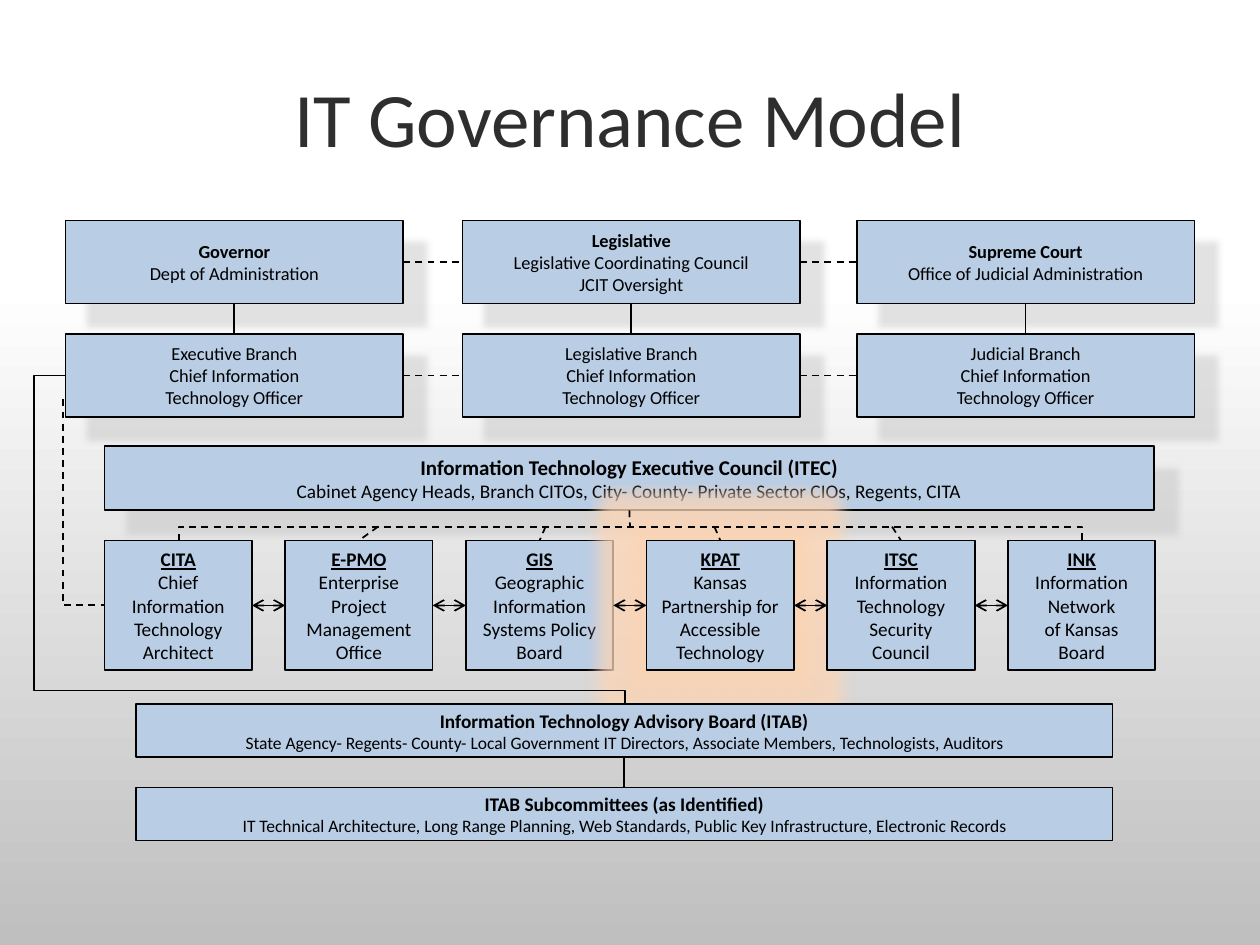
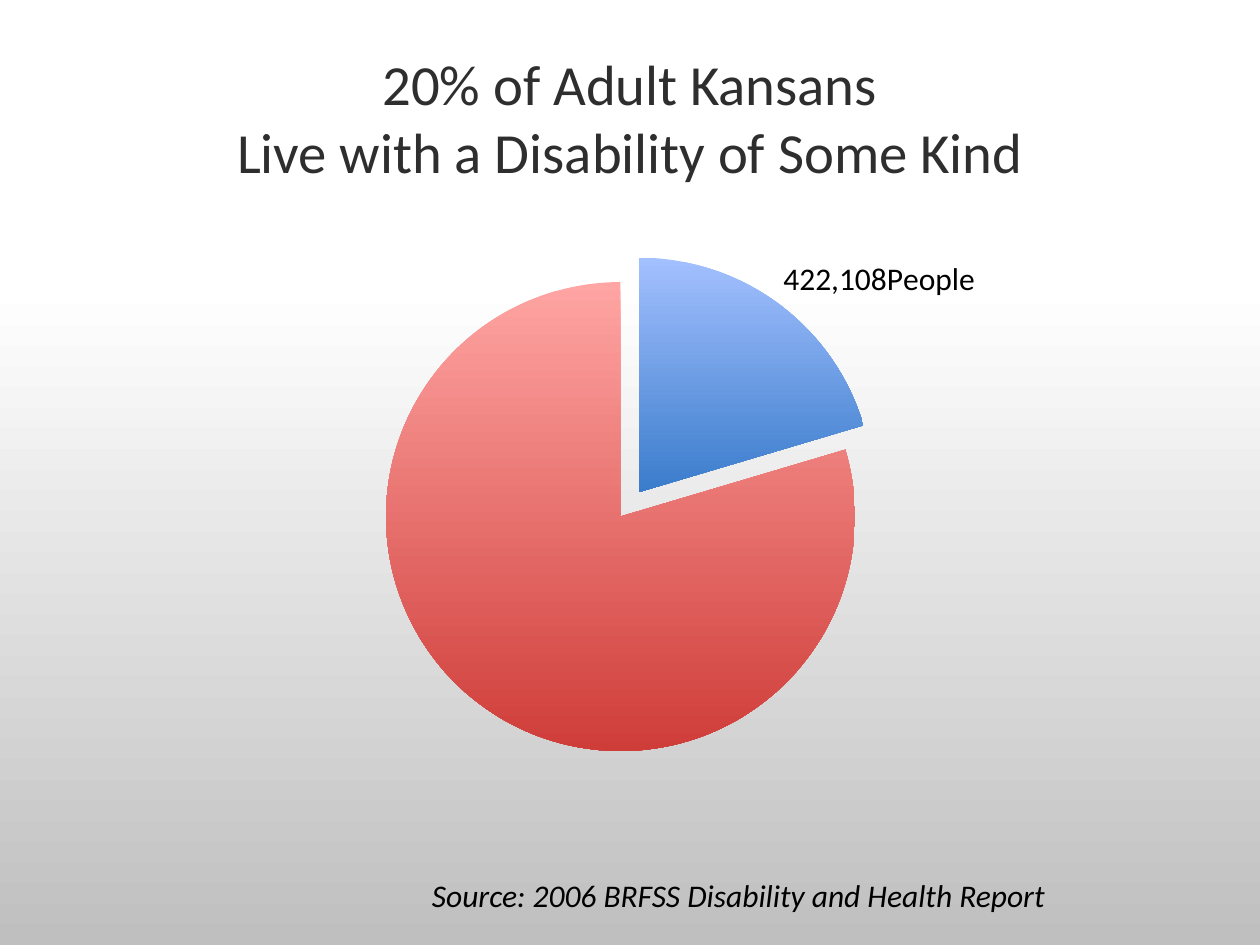
"""Build two slides: an IT governance chart and a pie of disability figures."""
import dataclasses
import itertools
import typing

import lxml.etree
import pptx
import pptx.chart.data
import pptx.dml.color
import pptx.enum.chart
import pptx.enum.dml
import pptx.enum.shapes
import pptx.enum.text
import pptx.oxml.ns
import pptx.util

Inches = pptx.util.Inches
Pt = pptx.util.Pt
RGB = pptx.dml.color.RGBColor.from_string
qn = pptx.oxml.ns.qn
TOP, LEFT, BOTTOM, RIGHT = range(4)


@dataclasses.dataclass(frozen=True)
class Theme:
    font: str = "Calibri"
    ink: str = "000000"
    title: str = "2E2E2E"
    box: str = "B9CDE5"
    shadow: str = "BFBFBF"
    glow: str = "FCD5B5"
    page: tuple[str, str] = ("FFFFFF", "BFBFBF")
    blue: tuple[str, str] = ("A3C0FF", "3A7CCB")
    red: tuple[str, str] = ("FFA5A3", "CF3D39")
    title_size: float = 44
    long_title_size: float = 32.4
    body_size: float = 18
    council_size: float = 12
    office_size: float = 11
    branch_size: float = 10.5
    board_size: float = 10
    line_width: float = 1


THEME = Theme()


@dataclasses.dataclass(frozen=True)
class Box:
    x: float
    y: float
    w: float
    h: float
    head: str
    lines: tuple[str, ...]
    size: float
    head_size: float
    bold: bool = True
    underline: bool = False
    effect: str = ""


class Side(typing.NamedTuple):
    sp: typing.Any
    site: int


Point = tuple[float, float]
End = typing.Union[Side, Point]


def set_gradient(fill: typing.Any, colors: tuple[str, str], start: float = 0) -> None:
    """Fill from top to bottom with two colours."""
    fill.gradient()
    fill.gradient_angle = 270
    for stop, color, position in zip(fill.gradient_stops, colors, (start, 1)):
        stop.color.rgb = RGB(color)
        stop.position = position


def add_run(p: typing.Any, text: str, size: float, color: str = THEME.ink,
            **style: bool) -> None:
    """Append one styled run to a paragraph."""
    r = p.add_run()
    r.text = text
    r.font.name, r.font.size = THEME.font, Pt(size)
    r.font.color.rgb = RGB(color)
    for name, value in style.items():
        setattr(r.font, name, value)


def add_slide(prs: typing.Any, title: tuple[str, ...], size: float) -> typing.Any:
    """Add a slide with the shared background and centred title."""
    s = prs.slides.add_slide(prs.slide_layouts[6])
    set_gradient(s.background.fill, THEME.page, 0.3)
    tf = s.shapes.add_textbox(Inches(0.5), Inches(0.3), Inches(9), Inches(1.25)).text_frame
    tf.word_wrap = True
    tf.vertical_anchor = pptx.enum.text.MSO_ANCHOR.MIDDLE
    p = tf.paragraphs[0]
    p.alignment = pptx.enum.text.PP_ALIGN.CENTER
    for i, text in enumerate(title):
        if i:
            p.add_line_break()
        add_run(p, text, size, THEME.title)
    return s


def add_effect(sp: typing.Any, kind: str) -> None:
    """Give a shape an offset shadow or a soft glow."""
    attrs, color, alpha = {
        "outerShdw": ({"blurRad": Pt(4), "dist": Pt(18), "dir": 45 * 60000},
                      THEME.shadow, 43),
        "glow": ({"rad": Inches(0.25)}, THEME.glow, 75),
    }[kind]
    effects = sp._element.spPr.find(qn("a:effectLst"))
    effect = lxml.etree.SubElement(effects, qn(f"a:{kind}"),
                                   {k: str(int(v)) for k, v in attrs.items()})
    clr = lxml.etree.SubElement(effect, qn("a:srgbClr"), val=color)
    lxml.etree.SubElement(clr, qn("a:alpha"), val=str(alpha * 1000))


def style_line(line: typing.Any, dashed: bool = False) -> None:
    """Apply the shared outline."""
    line.color.rgb = RGB(THEME.ink)
    line.width = Pt(THEME.line_width)
    if dashed:
        line.dash_style = pptx.enum.dml.MSO_LINE.DASH


def draw_box(s: typing.Any, box: Box) -> typing.Any:
    """Draw one labelled rectangle."""
    sp = s.shapes.add_shape(pptx.enum.shapes.MSO_SHAPE.RECTANGLE,
                            *map(Inches, (box.x, box.y, box.w, box.h)))
    sp.shadow.inherit = False
    sp.fill.solid()
    sp.fill.fore_color.rgb = RGB(THEME.box)
    style_line(sp.line)
    if box.effect:
        add_effect(sp, box.effect)
    tf = sp.text_frame
    tf.word_wrap = False
    tf.vertical_anchor = pptx.enum.text.MSO_ANCHOR.MIDDLE
    for i, text in enumerate((box.head, *box.lines)):
        p = tf.add_paragraph() if i else tf.paragraphs[0]
        p.alignment = pptx.enum.text.PP_ALIGN.CENTER
        if i:
            add_run(p, text, box.size)
        else:
            add_run(p, text, box.head_size, bold=box.bold, underline=box.underline)
    return sp


def draw_line(s: typing.Any, start: End, end: End, dashed: bool = False,
              arrows: bool = False) -> None:
    """Draw a straight connector between points or box sides."""
    points = [(0, 0) if isinstance(e, Side) else e for e in (start, end)]
    c = s.shapes.add_connector(pptx.enum.shapes.MSO_CONNECTOR.STRAIGHT,
                               *(Inches(v) for point in points for v in point))
    if isinstance(start, Side):
        c.begin_connect(*start)
    if isinstance(end, Side):
        c.end_connect(*end)
    style_line(c.line, dashed)
    spPr = c._element.spPr
    if arrows:
        for tag in ("a:headEnd", "a:tailEnd"):
            lxml.etree.SubElement(spPr.find(qn("a:ln")), qn(tag), type="arrow")
    lxml.etree.SubElement(spPr, qn("a:effectLst"))


def draw_route(s: typing.Any, points: list[Point], dashed: bool = False) -> None:
    """Draw an open line with right-angled bends."""
    emu = [(Inches(x), Inches(y)) for x, y in points]
    builder = s.shapes.build_freeform(*emu[0])
    builder.add_line_segments(emu[1:], close=False)
    sp = builder.convert_to_shape()
    sp.shadow.inherit = False
    sp.fill.background()
    style_line(sp.line, dashed)


def build_governance(prs: typing.Any) -> None:
    """Build the governance model slide."""
    s = add_slide(prs, ("IT Governance Model",), THEME.title_size)
    columns = (0.52, 3.67, 6.8)
    branches = (
        ("Governor", "Dept of Administration"),
        ("Legislative", "Legislative Coordinating Council", "JCIT Oversight"),
        ("Supreme Court", "Office of Judicial Administration"),
    )
    officers = [(f"{name} Branch", "Chief Information", "Technology Officer")
                for name in ("Executive", "Legislative", "Judicial")]
    rows = [
        [draw_box(s, Box(x, y, 2.68, 0.66, head, tuple(lines), THEME.branch_size,
                         THEME.branch_size, bold, effect="outerShdw"))
         for x, (head, *lines) in zip(columns, texts)]
        for y, texts, bold in ((1.75, branches, True), (2.65, officers, False))
    ]
    itec = draw_box(s, Box(
        0.83, 3.54, 8.33, 0.51, "Information Technology Executive Council (ITEC)",
        ("Cabinet Agency Heads, Branch CITOs, City- County- Private Sector CIOs, Regents, CITA",),
        THEME.office_size, THEME.council_size, effect="outerShdw"))
    office_texts = (
        ("CITA", "Chief", "Information", "Technology", "Architect"),
        ("E-PMO", "Enterprise", "Project", "Management", "Office"),
        ("GIS", "Geographic", "Information", "Systems Policy", "Board"),
        ("KPAT", "Kansas", "Partnership for", "Accessible", "Technology"),
        ("ITSC", "Information", "Technology", "Security", "Council"),
        ("INK", "Information", "Network", "of Kansas", "Board"),
    )
    pitch = 7.17 / (len(office_texts) - 1)
    offices = [
        draw_box(s, Box(0.83 + i * pitch, 4.29, 1.17, 1.03, head, tuple(lines),
                        THEME.office_size, THEME.office_size, underline=True,
                        effect="glow" if head == "KPAT" else ""))
        for i, (head, *lines) in enumerate(office_texts)
    ]
    itab, subcommittees = [
        draw_box(s, Box(1.08, y, 7.75, 0.42, head, (line,), THEME.board_size,
                        THEME.office_size))
        for y, head, line in (
            (5.59, "Information Technology Advisory Board (ITAB)",
             "State Agency- Regents- County- Local Government IT Directors, "
             "Associate Members, Technologists, Auditors"),
            (6.25, "ITAB Subcommittees (as Identified)",
             "IT Technical Architecture, Long Range Planning, Web Standards, "
             "Public Key Infrastructure, Electronic Records"),
        )
    ]

    for upper, lower in (*zip(*rows), (itab, subcommittees)):
        draw_line(s, Side(upper, BOTTOM), Side(lower, TOP))
    draw_route(s, [(0.52, 2.98), (0.27, 2.98), (0.27, 5.48), (4.96, 5.48), (4.96, 5.59)])
    for a, b in itertools.pairwise(offices):
        draw_line(s, Side(a, RIGHT), Side(b, LEFT), arrows=True)
    for row in rows:
        for a, b in itertools.pairwise(row):
            draw_line(s, Side(a, RIGHT), Side(b, LEFT), dashed=True)
    draw_route(s, [(0.5, 3.17), (0.5, 4.8), (0.83, 4.8)], dashed=True)
    bus_y = 4.18
    draw_route(s, [(1.42, 4.29), (1.42, bus_y), (8.59, bus_y), (8.59, 4.29)], dashed=True)
    for x, office in zip((3, 4.33, 5.67, 7.08), offices[1:-1]):
        draw_line(s, (x, bus_y), Side(office, TOP), dashed=True)
    draw_line(s, Side(itec, BOTTOM), (5, bus_y), dashed=True)


def set_plot_layout(chart: typing.Any, **place: float) -> None:
    """Fix the inner plot area as fractions of the chart."""
    area = chart._chartSpace.chart.plotArea
    for old in area.findall(qn("c:layout")):
        area.remove(old)
    layout = lxml.etree.Element(qn("c:layout"))
    area.insert(0, layout)
    manual = lxml.etree.SubElement(layout, qn("c:manualLayout"))
    values = {"layoutTarget": "inner", "xMode": "edge", "yMode": "edge", **place}
    for name, value in values.items():
        lxml.etree.SubElement(manual, qn(f"c:{name}"), val=str(value))


def hide_label(label: typing.Any) -> None:
    """Suppress the label of one slice."""
    dLbl = label._get_or_add_dLbl()
    for child in list(dLbl)[1:]:
        dLbl.remove(child)
    lxml.etree.SubElement(dLbl, qn("c:delete"), val="1")


def build_disability(prs: typing.Any) -> None:
    """Build the disability pie slide."""
    s = add_slide(prs, ("20% of Adult Kansans", "Live with a Disability of Some Kind"),
                  THEME.long_title_size)
    data = pptx.chart.data.CategoryChartData()
    data.categories = ["1", "2"]
    data.add_series("Series 1", (0.204, 0.796))
    chart = s.shapes.add_chart(pptx.enum.chart.XL_CHART_TYPE.PIE, Inches(0.48), Inches(1.58),
                               Inches(9), Inches(4.95), data).chart
    chart.has_legend = chart.has_title = False
    chart.font.name, chart.font.size = THEME.font, Pt(THEME.body_size)
    chart.font.color.rgb = RGB(THEME.ink)
    set_plot_layout(chart, x=0.25, y=0, w=0.52, h=0.94)
    series = chart.plots[0].series[0]
    for i, colors in enumerate((THEME.blue, THEME.red)):
        set_gradient(series.points[i].format.fill, colors)
    slices = series._element.findall(qn("c:dPt"))
    anchors = [slices[0], *(dpt.find(qn("c:spPr")) for dpt in slices)]
    for anchor, explosion in zip(anchors, (25, 0, 13)):
        anchor.addprevious(anchor.makeelement(qn("c:explosion"), {"val": str(explosion)}))
    series.data_labels.show_value = True
    label = series.points[0].data_label
    add_run(label.text_frame.paragraphs[0], "422,108People", THEME.body_size)
    label.position = pptx.enum.chart.XL_LABEL_POSITION.OUTSIDE_END
    hide_label(series.points[1].data_label)

    tf = s.shapes.add_textbox(Inches(3.33), Inches(6.9), Inches(6.5), Inches(0.4)).text_frame
    tf.word_wrap = True
    add_run(tf.paragraphs[0], "Source: 2006 BRFSS Disability and Health Report",
            THEME.body_size, italic=True)


def main() -> None:
    """Build and save the presentation."""
    prs = pptx.Presentation()
    prs.slide_width, prs.slide_height = Inches(10), Inches(7.5)
    build_governance(prs)
    build_disability(prs)
    prs.save("out.pptx")


if __name__ == "__main__":
    main()
